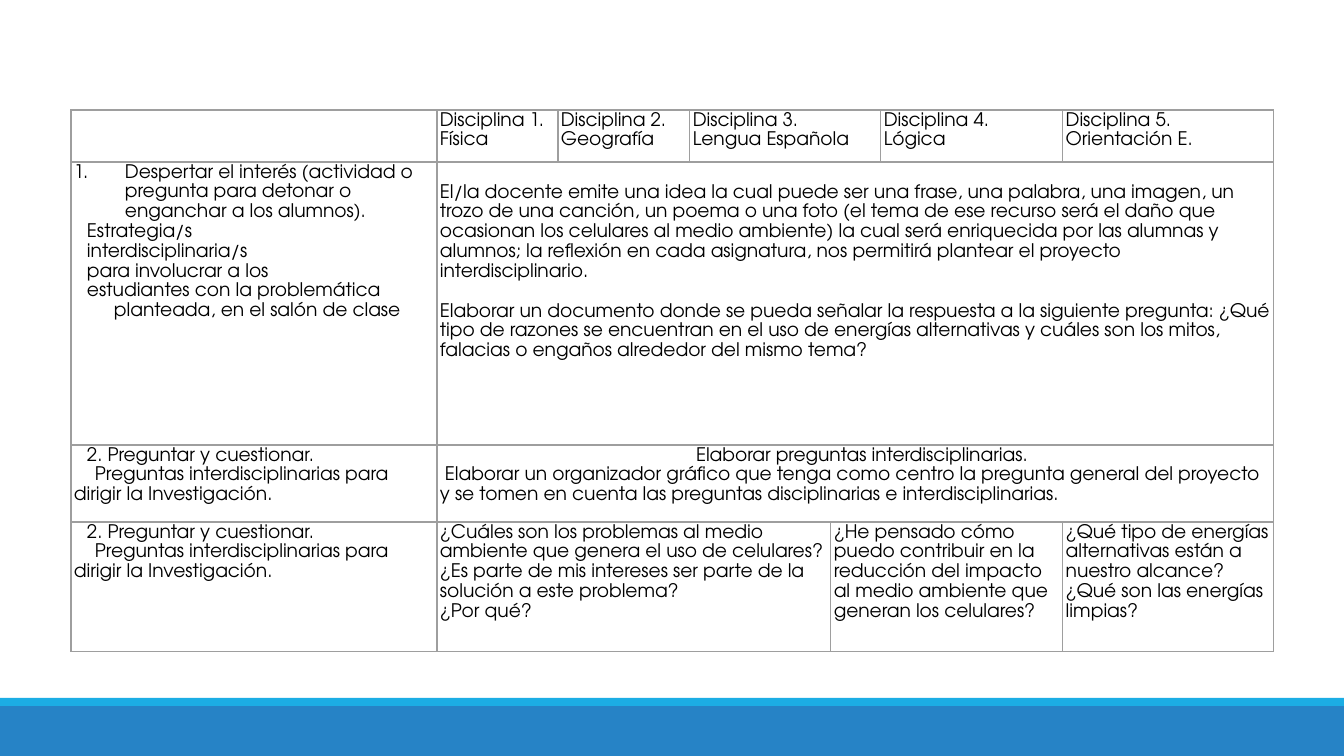
"""Build a slide with the interdisciplinary planning table of five school subjects."""
from dataclasses import dataclass

from lxml import etree
from pptx import Presentation, util as u
from pptx.dml.color import RGBColor
from pptx.enum import shapes, text
from pptx.oxml.ns import qn

EMU_PER_PX = 914400 / 134.4


@dataclass(frozen=True)
class Theme:
    font: str = "TeX Gyre Adventor"
    size: int = 10
    line_spacing: float = 1.15
    ink: str = "000000"
    border: str = "9E9E9E"
    border_width: float = 0.75
    base: str = "2683C6"
    accent: str = "1CADE4"


@dataclass(frozen=True)
class Line:
    words: str
    margin: int = 0
    indent: int = 0
    before: int = 0
    centred: bool = False
    numbered: bool = False


@dataclass(frozen=True)
class Entry:
    row: int
    column: int
    span: int
    lines: tuple[Line, ...]
    top: int = 0


@dataclass(frozen=True)
class Band:
    top: int
    height: int
    color: str


THEME = Theme()
SLIDE_WIDTH, SLIDE_HEIGHT = 1344, 756
TABLE_LEFT, TABLE_TOP = 71, 110
COLUMNS = (366, 121, 132, 141, 50, 182, 211)
ROWS = (52, 283, 77, 130)
BANDS = (Band(706, 50, THEME.base), Band(698, 8, THEME.accent))
LINE_PITCH = 20
HANGING = {"margin": 40, "indent": -27}

SUBJECTS = (
    (1, 1, "Física"),
    (2, 1, "Geografía"),
    (3, 2, "Lengua Española"),
    (5, 1, "Lógica"),
    (6, 1, "Orientación E."),
)
QUESTIONING = (
    Line("2. Preguntar y cuestionar.", **HANGING),
    Line("Preguntas interdisciplinarias para dirigir la Investigación.", indent=21),
)
STRATEGY = (
    "Estrategia/s",
    "interdisciplinaria/s",
    "para involucrar a los",
    "estudiantes con la problemática planteada, en el salón de clase",
)
ENTRIES = (
    *(Entry(0, column, span, (Line(f"Disciplina {number}."), Line(subject)))
      for number, (column, span, subject) in enumerate(SUBJECTS, 1)),
    Entry(1, 0, 1, (
        Line("Despertar el interés (actividad o pregunta para detonar o enganchar a los alumnos).",
             margin=51, indent=-51, numbered=True),
        *(Line(words, **HANGING) for words in STRATEGY),
    )),
    Entry(1, 1, 6, (
        Line("El/la docente emite una idea la cual puede ser una frase, una palabra, una imagen, "
             "un trozo de una canción, un poema o una foto (el tema de ese recurso será el daño "
             "que ocasionan los celulares al medio ambiente) la cual será enriquecida por las "
             "alumnas y alumnos; la reflexión en cada asignatura, nos permitirá plantear el "
             "proyecto interdisciplinario."),
        Line("Elaborar un documento donde se pueda señalar la respuesta a la siguiente pregunta: "
             "¿Qué tipo de razones se encuentran en el uso de energías alternativas y cuáles son "
             "los mitos, falacias o engaños alrededor del mismo tema?", before=LINE_PITCH),
    ), top=LINE_PITCH),
    *(Entry(row, 0, 1, QUESTIONING) for row in (2, 3)),
    Entry(2, 1, 6, (
        Line("Elaborar preguntas interdisciplinarias.", centred=True, **HANGING),
        Line("Elaborar un organizador gráfico que tenga como centro la pregunta general del "
             "proyecto y se tomen en cuenta las preguntas disciplinarias e interdisciplinarias.",
             indent=5),
    )),
    Entry(3, 1, 3, (
        Line("¿Cuáles son los problemas al medio ambiente que genera el uso de celulares?"),
        Line("¿Es parte de mis intereses ser parte de la solución a este problema?"),
        Line("¿Por qué?"),
    )),
    Entry(3, 4, 2, (
        Line("¿He pensado cómo puedo contribuir en la reducción del impacto al medio ambiente "
             "que generan los celulares?"),
    )),
    Entry(3, 6, 1, (
        Line("¿Qué tipo de energías alternativas están a nuestro alcance?"),
        Line("¿Qué son las energías limpias?"),
    )),
)


def px(length: int) -> u.Emu:
    return u.Emu(round(length * EMU_PER_PX))


def apply(target, values: dict) -> None:
    for name, value in values.items():
        setattr(target, name, value)


def draw_band(slide, band: Band) -> None:
    bar = slide.shapes.add_shape(shapes.MSO_SHAPE.RECTANGLE, 0, px(band.top),
                                 px(SLIDE_WIDTH), px(band.height))
    bar.shadow.inherit = False
    bar.fill.solid()
    bar.fill.fore_color.rgb = RGBColor.from_string(band.color)
    bar.line.fill.background()


def frame_cell(cell) -> None:
    apply(cell, {"margin_left": px(3), "margin_right": px(3),
                 "margin_top": 0, "margin_bottom": 0})
    cell.fill.background()
    properties = cell._tc.get_or_add_tcPr()
    for position, side in enumerate(("lnL", "lnR", "lnT", "lnB")):
        edge = etree.Element(qn(f"a:{side}"), w=str(u.Pt(THEME.border_width)))
        fill = etree.SubElement(edge, qn("a:solidFill"))
        etree.SubElement(fill, qn("a:srgbClr"), val=THEME.border)
        properties.insert(position, edge)


def write_line(paragraph, line: Line) -> None:
    apply(paragraph, {
        "line_spacing": THEME.line_spacing,
        "space_before": px(line.before),
        "alignment": text.PP_ALIGN.CENTER if line.centred else text.PP_ALIGN.LEFT,
    })
    properties = paragraph._p.get_or_add_pPr()
    properties.set("marL", str(px(line.margin)))
    properties.set("indent", str(px(line.indent)))
    if line.numbered:
        etree.SubElement(properties, qn("a:buFont"), typeface=THEME.font)
        etree.SubElement(properties, qn("a:buAutoNum"), type="arabicPeriod")
    run = paragraph.add_run()
    run.text = line.words
    apply(run.font, {"name": THEME.font, "size": u.Pt(THEME.size), "bold": False})
    run.font.color.rgb = RGBColor.from_string(THEME.ink)


def fill_entry(table, entry: Entry) -> None:
    cell = table.cell(entry.row, entry.column)
    if entry.span > 1:
        cell.merge(table.cell(entry.row, entry.column + entry.span - 1))
    cell.margin_top = px(entry.top)
    for index, line in enumerate(entry.lines):
        frame = cell.text_frame
        write_line(frame.add_paragraph() if index else frame.paragraphs[0], line)


def draw_table(slide) -> None:
    planning = slide.shapes.add_table(len(ROWS), len(COLUMNS), px(TABLE_LEFT), px(TABLE_TOP),
                                      px(sum(COLUMNS)), px(sum(ROWS))).table
    apply(planning, {"first_row": False, "horz_banding": False})
    for column, width in zip(planning.columns, COLUMNS):
        column.width = px(width)
    for row, height in zip(planning.rows, ROWS):
        row.height = px(height)
    for cell in planning.iter_cells():
        frame_cell(cell)
    for entry in ENTRIES:
        fill_entry(planning, entry)


def main() -> None:
    deck = Presentation()
    apply(deck, {"slide_width": px(SLIDE_WIDTH), "slide_height": px(SLIDE_HEIGHT)})
    slide = deck.slides.add_slide(deck.slide_layouts[6])
    for band in BANDS:
        draw_band(slide, band)
    draw_table(slide)
    deck.save("out.pptx")


if __name__ == "__main__":
    main()
